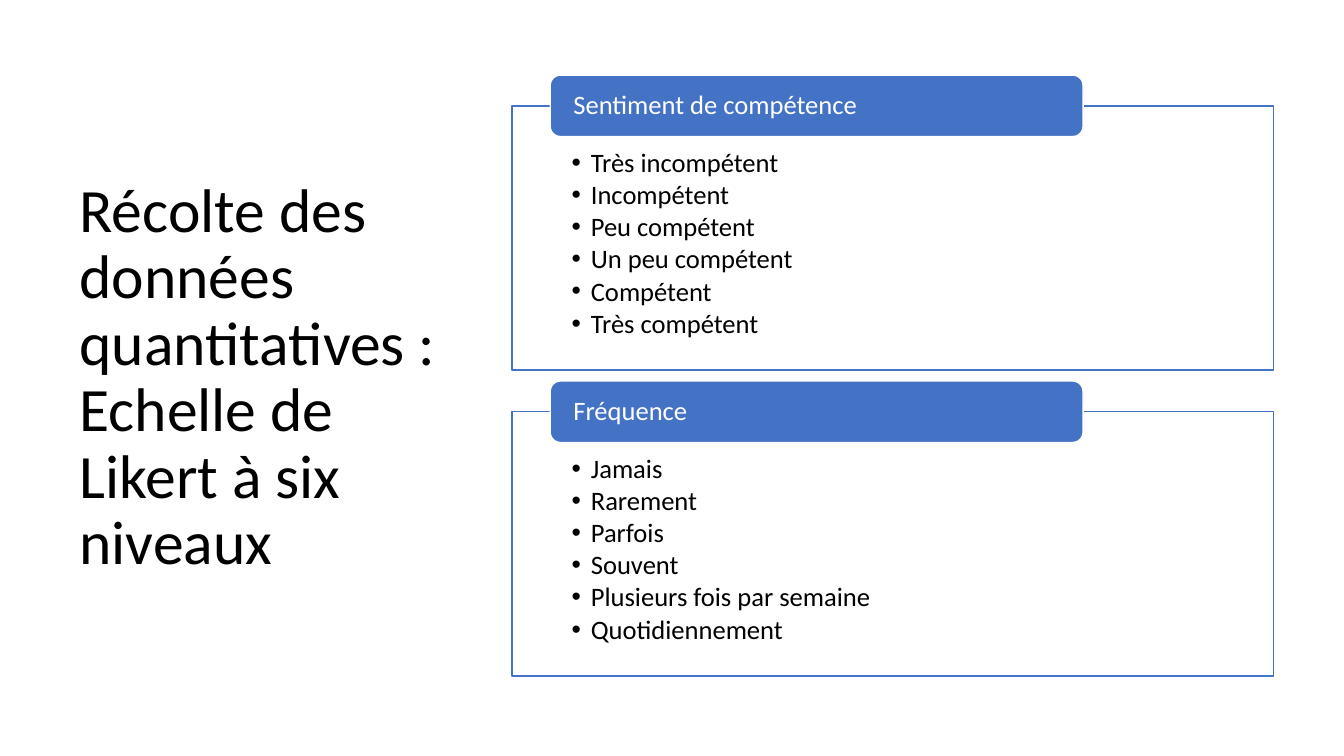
from pptx import Presentation
from pptx.dml.color import RGBColor
from pptx.enum.shapes import MSO_SHAPE as SHAPE
from pptx.enum.text import MSO_ANCHOR as ANCHOR, PP_ALIGN as ALIGN
from pptx.oxml.ns import qn
from pptx.util import Inches, Pt
from lxml.etree import SubElement

THEME = {
    "font": "Calibri",
    "blue": RGBColor(0x44, 0x72, 0xC4),
    "white": RGBColor(0xFF, 0xFF, 0xFF),
    "black": RGBColor(0, 0, 0),
    "title": Pt(44),
    "body": Pt(19),
}
TITLE = "Récolte des données quantitatives : Echelle de Likert à six niveaux"
SCALES = {
    "Sentiment de compétence": [
        "Très incompétent", "Incompétent", "Peu compétent",
        "Un peu compétent", "Compétent", "Très compétent",
    ],
    "Fréquence": [
        "Jamais", "Rarement", "Parfois",
        "Souvent", "Plusieurs fois par semaine", "Quotidiennement",
    ],
}
FRAME_X, FRAME_Y, FRAME_W, FRAME_H = 5.08, 1.05, 7.55, 2.62
LABEL_W, LABEL_H = FRAME_W * 0.7, 0.61
LABEL_X, LABEL_Y = FRAME_X + FRAME_W * 0.05, FRAME_Y - LABEL_H / 2
PITCH = 3.035
INDENT = Inches(0.19)


def write(s, lines, size, color, anchor, margins=(0.1, 0.05, 0.1, 0.05), bullets=False):
    """Fill a shape with one paragraph per line; margins run left, top, right, bottom."""
    tf = s.text_frame
    left, top, right, bottom = map(Inches, margins)
    settings = {
        "word_wrap": True, "vertical_anchor": anchor,
        "margin_left": left, "margin_top": top,
        "margin_right": right, "margin_bottom": bottom,
    }
    for name, value in settings.items():
        setattr(tf, name, value)
    for i, line in enumerate(lines):
        p = tf.add_paragraph() if i else tf.paragraphs[0]
        p.alignment, p.line_spacing = ALIGN.LEFT, 0.9
        r = p.add_run()
        r.text = line
        r.font.name, r.font.size = THEME["font"], size
        r.font.color.rgb = color
        if bullets:
            p.level, p.space_after = 1, Pt(2.5)
            pPr = p._p.get_or_add_pPr()
            pPr.set("marL", str(INDENT))
            pPr.set("indent", str(-INDENT))
            SubElement(pPr, qn("a:buFont"), typeface="Arial")
            SubElement(pPr, qn("a:buChar"), char="•")


def add_box(kind, x, y, w, h, fill, line):
    s = slide.shapes.add_shape(kind, *map(Inches, (x, y, w, h)))
    s.shadow.inherit = False
    s.fill.solid()
    s.fill.fore_color.rgb = fill
    s.line.color.rgb, s.line.width = line, Pt(1)
    return s


prs = Presentation()
prs.slide_width, prs.slide_height = Inches(13.33), Inches(7.5)
slide = prs.slides.add_slide(prs.slide_layouts[6])

title = slide.shapes.add_textbox(*map(Inches, (0.69, 0.7, 3.74, 6.11)))
write(title, [TITLE], THEME["title"], THEME["black"], ANCHOR.MIDDLE)

for row, (name, levels) in enumerate(SCALES.items()):
    dy = row * PITCH
    frame = add_box(SHAPE.RECTANGLE, FRAME_X, FRAME_Y + dy, FRAME_W, FRAME_H,
                    THEME["white"], THEME["blue"])
    write(frame, levels, THEME["body"], THEME["black"], ANCHOR.TOP,
          (0.59, 0.43, 0.59, 0.15), bullets=True)
    label = add_box(SHAPE.ROUNDED_RECTANGLE, LABEL_X, LABEL_Y + dy, LABEL_W, LABEL_H,
                    THEME["blue"], THEME["white"])
    write(label, [name], THEME["body"], THEME["white"], ANCHOR.MIDDLE, (0.2, 0, 0.2, 0))

prs.save("out.pptx")
